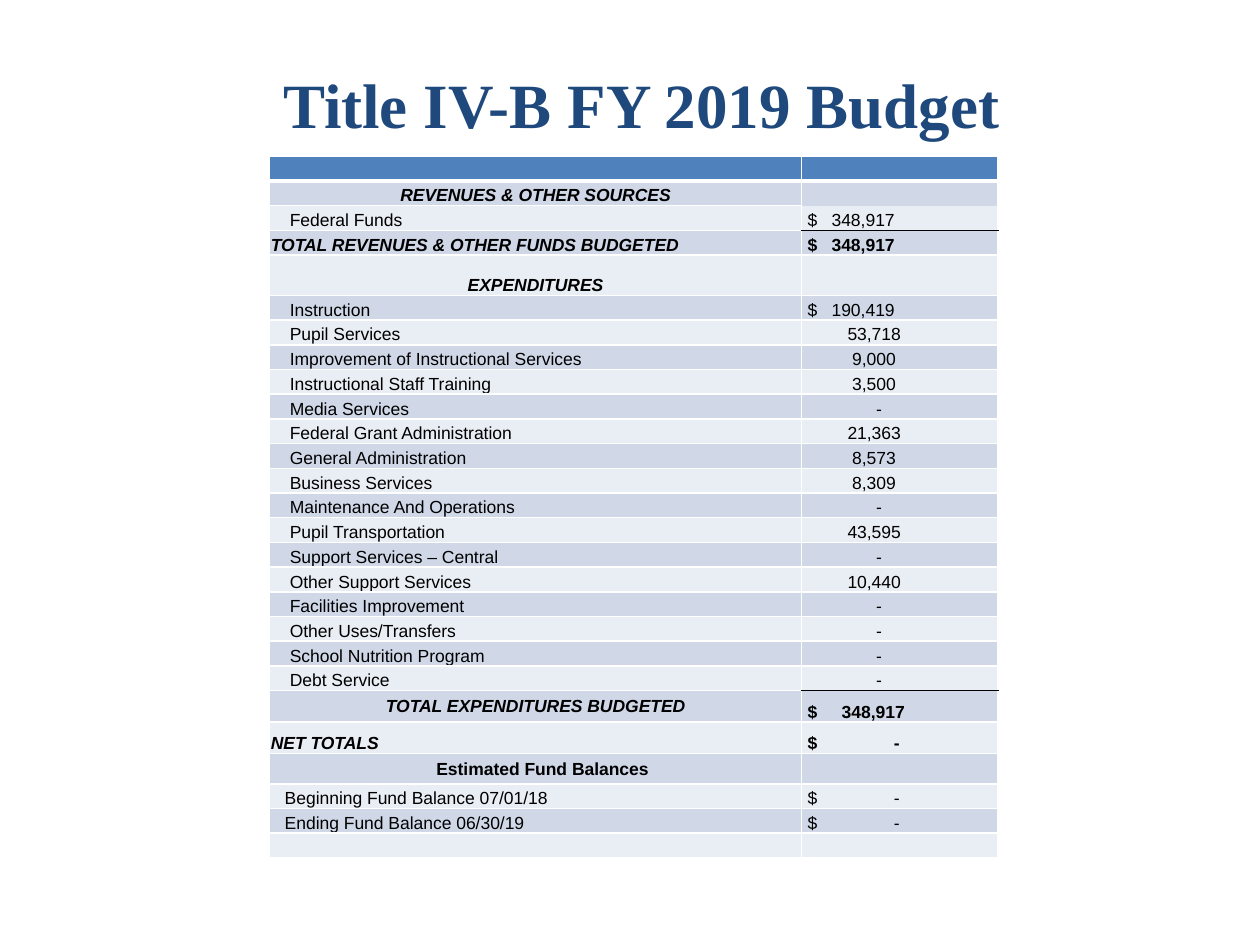
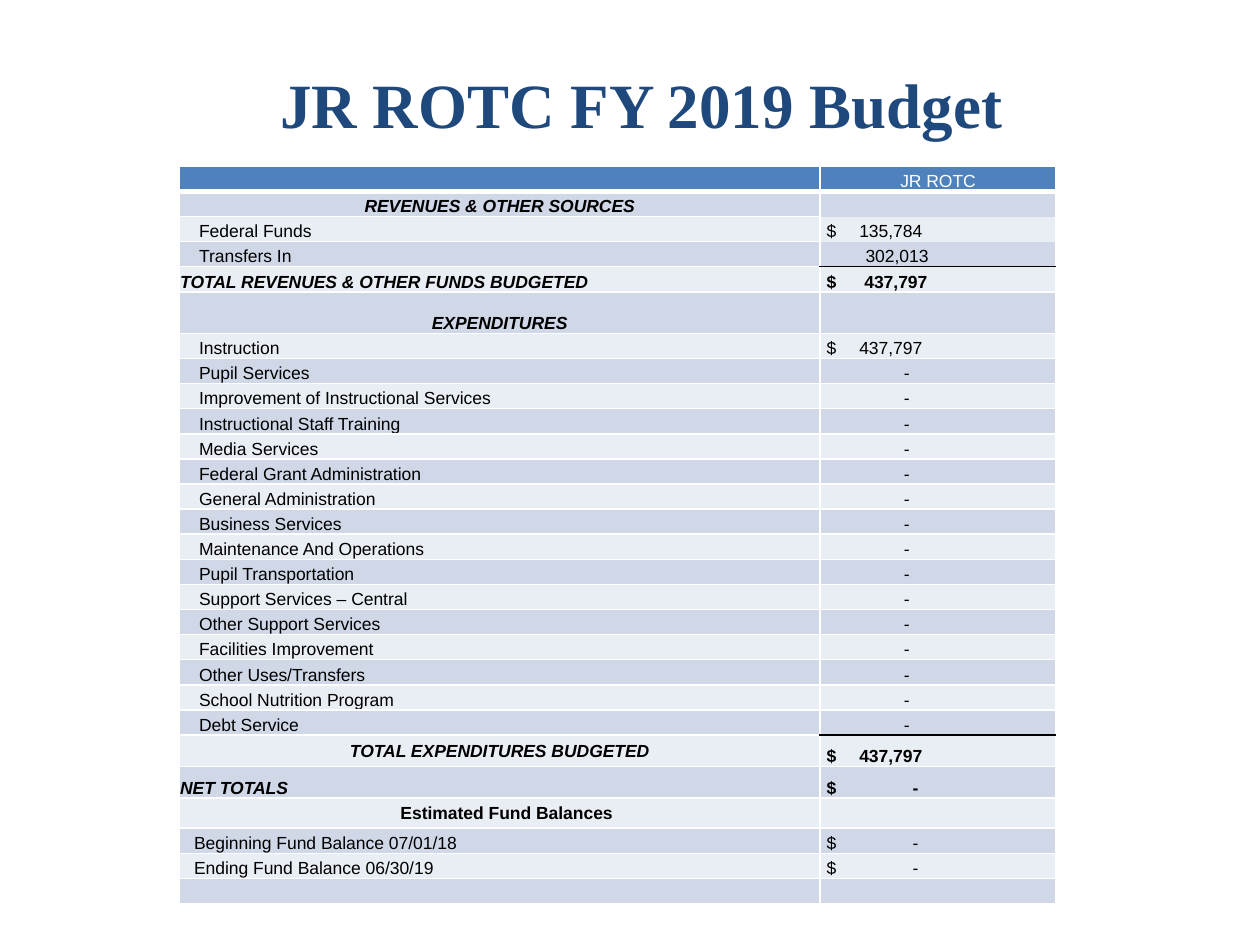
from dataclasses import dataclass

import pptx
import pptx.dml.color
import pptx.enum.text
import pptx.oxml.ns
import pptx.slide
import pptx.table
import pptx.util
from lxml import etree

Inches = pptx.util.Inches
Pt = pptx.util.Pt
ALIGN = pptx.enum.text.PP_ALIGN
ANCHOR = pptx.enum.text.MSO_ANCHOR
qn = pptx.oxml.ns.qn


@dataclass(frozen=True)
class Theme:
    title_color: str = "1F497D"
    header_fill: str = "4F81BD"
    bands: tuple[str, str] = ("D0D8E8", "E9EDF4")
    white: str = "FFFFFF"
    black: str = "000000"
    title_font: str = "Times New Roman"
    body_font: str = "Arial"
    title_size: int = 36
    body_size: int = 10
    rule: int = 1
    header_rule: int = 3
    inset: float = 0.01
    dollar_inset: float = 0.05
    dollar_dash_edge: float = 0.78


THEME = Theme()


@dataclass(frozen=True)
class LabelStyle:
    bold: bool = False
    italic: bool = False
    align: ALIGN = ALIGN.LEFT
    anchor: ANCHOR = ANCHOR.BOTTOM
    indent: float = THEME.inset


ITEM = LabelStyle(indent=0.16)
SECTION = LabelStyle(bold=True, italic=True, align=ALIGN.CENTER)
TOTAL = LabelStyle(bold=True, italic=True)
GRAND_TOTAL = LabelStyle(bold=True, italic=True, align=ALIGN.CENTER, anchor=ANCHOR.MIDDLE)
BALANCE_SECTION = LabelStyle(bold=True, align=ALIGN.CENTER, anchor=ANCHOR.MIDDLE, indent=0.12)
BALANCE = LabelStyle(indent=0.12)


@dataclass(frozen=True)
class Row:
    label: str = ""
    style: LabelStyle = ITEM
    amount: str = ""
    dollar: bool = False
    edge: float = 0  # right edge of the amount, from the column's left side
    height: float | None = None  # None takes an equal share of what is left


@dataclass(frozen=True)
class Budget:
    title: str
    header: str
    left: float
    top: float
    height: float
    columns: tuple[float, float]
    revenues: tuple[tuple[str, str], ...]
    total: str
    expenditures: tuple[str, ...]
    section_height: float
    amount_edge: float
    dash_edge: float
    revenue_total_edge: float
    expenditure_total_edge: float


EXPENDITURE_LABELS = (
    "Instruction",
    "Pupil Services",
    "Improvement of Instructional Services",
    "Instructional Staff Training",
    "Media Services",
    "Federal Grant Administration",
    "General Administration",
    "Business Services",
    "Maintenance And Operations",
    "Pupil Transportation",
    "Support Services – Central",
    "Other Support Services",
    "Facilities Improvement",
    "Other Uses/Transfers",
    "School Nutrition Program",
    "Debt Service",
)

BUDGETS = (
    Budget(
        title="Title IV-B FY 2019 Budget", header="",
        left=2.14, top=1.24, height=5.57, columns=(4.22, 1.51),
        revenues=(("Federal Funds", "348,917"),), total="348,917",
        expenditures=("190,419", "53,718", "9,000", "3,500", "-", "21,363", "8,573", "8,309",
                      "-", "43,595", "-", "10,440", "-", "-", "-", "-"),
        section_height=0.32, amount_edge=0.74, dash_edge=0.59,
        revenue_total_edge=0.74, expenditure_total_edge=0.82,
    ),
    Budget(
        title="JR ROTC FY 2019 Budget", header="JR ROTC",
        left=1.42, top=1.32, height=5.86, columns=(5.09, 1.82),
        revenues=(("Federal Funds", "135,784"), ("Transfers In", "302,013")), total="437,797",
        expenditures=("437,797",) + ("-",) * 15,
        section_height=0.33, amount_edge=0.81, dash_edge=0.66,
        revenue_total_edge=0.85, expenditure_total_edge=0.81,
    ),
)


def item_rows(budget: Budget, items: list[tuple[str, str]]) -> list[Row]:
    """Line items; only the first one carries the dollar sign."""
    rows = []
    for index, (label, amount) in enumerate(items):
        edge = budget.amount_edge
        if amount == "-":
            edge = budget.dash_edge
        elif len(amount) == len("9,000"):
            edge -= 0.04
        rows.append(Row(label, ITEM, amount, index == 0, edge))
    return rows


def budget_rows(budget: Budget) -> list[Row]:
    """All rows below the header."""
    dash = THEME.dollar_dash_edge
    return [
        Row("REVENUES & OTHER SOURCES", SECTION),
        *item_rows(budget, list(budget.revenues)),
        Row("TOTAL REVENUES & OTHER FUNDS BUDGETED", TOTAL, budget.total, True,
            budget.revenue_total_edge),
        Row("EXPENDITURES", SECTION, height=budget.section_height),
        *item_rows(budget, list(zip(EXPENDITURE_LABELS, budget.expenditures))),
        Row("TOTAL EXPENDITURES BUDGETED", GRAND_TOTAL, budget.total, True,
            budget.expenditure_total_edge, 0.25),
        Row("NET TOTALS", TOTAL, "-", True, dash, 0.25),
        Row("Estimated Fund Balances", BALANCE_SECTION, height=0.24),
        Row("Beginning Fund Balance 07/01/18", BALANCE, "-", True, dash),
        Row("Ending Fund Balance 06/30/19", BALANCE, "-", True, dash),
        Row(),
    ]


def rgb(color: str) -> pptx.dml.color.RGBColor:
    return pptx.dml.color.RGBColor.from_string(color)


def write_cell(cell: pptx.table._Cell, text: str, fill: str, style: LabelStyle,
               color: str = THEME.black, right: float = THEME.inset,
               tab: float | None = None) -> None:
    cell.fill.solid()
    cell.fill.fore_color.rgb = rgb(fill)
    cell.margin_left, cell.margin_right = Inches(style.indent), Inches(right)
    cell.margin_top, cell.margin_bottom = Inches(THEME.inset), 0
    cell.vertical_anchor = style.anchor
    paragraph = cell.text_frame.paragraphs[0]
    paragraph.text = text
    paragraph.alignment = style.align
    if tab is not None:
        tabs = etree.SubElement(paragraph._p.get_or_add_pPr(), qn("a:tabLst"))
        etree.SubElement(tabs, qn("a:tab"), pos=str(Inches(tab)), algn="r")
    for run in paragraph.runs:
        run.font.name, run.font.size = THEME.body_font, Pt(THEME.body_size)
        run.font.bold, run.font.italic = style.bold, style.italic
        run.font.color.rgb = rgb(color)
    if not text:  # keeps empty rows from growing
        etree.SubElement(paragraph._p, qn("a:endParaRPr"), sz=str(THEME.body_size * 100))


def write_amount(cell: pptx.table._Cell, row: Row, fill: str, width: float) -> None:
    bold = row.style.bold
    if row.dollar:
        style = LabelStyle(bold=bold, indent=THEME.dollar_inset)
        write_cell(cell, f"$\t{row.amount}", fill, style, tab=row.edge - THEME.dollar_inset)
    else:
        style = LabelStyle(bold=bold, align=ALIGN.RIGHT)
        write_cell(cell, row.amount, fill, style, right=width - row.edge)


def set_borders(cell: pptx.table._Cell, top: tuple[str, int] | None,
                bottom: tuple[str, int] | None) -> None:
    """White sides, with the given top and bottom; None leaves an edge open."""
    side = (THEME.white, THEME.rule)
    properties = cell._tc.get_or_add_tcPr()
    for index, (name, border) in enumerate(zip("LRTB", (side, side, top, bottom))):
        line = etree.Element(qn(f"a:ln{name}"))
        if border is None:
            etree.SubElement(line, qn("a:noFill"))
        else:
            line.set("w", str(Pt(border[1])))
            solid = etree.SubElement(line, qn("a:solidFill"))
            etree.SubElement(solid, qn("a:srgbClr"), val=border[0])
        properties.insert(index, line)


def draw_rules(table: pptx.table.Table, revenue_count: int) -> None:
    white, black = (THEME.white, THEME.rule), (THEME.black, THEME.rule)
    header = (THEME.white, THEME.header_rule)
    row_count = len(table.rows)
    # One border per horizontal edge, so neighbouring cells always agree
    label_edges = [white, header] + [white] * (row_count - 1)
    amount_edges = list(label_edges)
    revenue_total = 2 + revenue_count
    expenditure_total = revenue_total + 2 + len(EXPENDITURE_LABELS)
    for edge in range(2, revenue_total):
        amount_edges[edge] = None
    amount_edges[revenue_total] = amount_edges[expenditure_total] = black
    for column, edges in enumerate((label_edges, amount_edges)):
        for index in range(row_count):
            set_borders(table.cell(index, column), edges[index], edges[index + 1])


def add_title(slide: pptx.slide.Slide, text: str) -> None:
    shape = slide.shapes.add_textbox(Inches(0.59), Inches(0.42), Inches(9), Inches(0.82))
    frame = shape.text_frame
    frame.word_wrap = True
    frame.margin_top = Inches(0.1)
    frame.text = text
    paragraph = frame.paragraphs[0]
    paragraph.alignment = ALIGN.CENTER
    font = paragraph.runs[0].font
    font.name, font.size, font.bold = THEME.title_font, Pt(THEME.title_size), True
    font.color.rgb = rgb(THEME.title_color)


def add_budget_table(slide: pptx.slide.Slide, budget: Budget) -> None:
    rows = budget_rows(budget)
    table = slide.shapes.add_table(
        len(rows) + 1, 2, Inches(budget.left), Inches(budget.top),
        Inches(sum(budget.columns)), Inches(budget.height)).table
    table.first_row = table.horz_banding = False
    for column, width in zip(table.columns, budget.columns):
        column.width = Inches(width)

    # Row heights
    heights = [None] + [row.height for row in rows]
    fixed = [height for height in heights if height]
    share = (budget.height - sum(fixed)) / (len(heights) - len(fixed))
    for table_row, height in zip(table.rows, heights):
        table_row.height = Inches(height or share)

    # Header and banded body
    for column, text in enumerate(("", budget.header)):
        write_cell(table.cell(0, column), text, THEME.header_fill,
                   LabelStyle(align=ALIGN.CENTER), THEME.white)
    for index, row in enumerate(rows, start=1):
        fill = THEME.bands[(index - 1) % 2]
        write_cell(table.cell(index, 0), row.label, fill, row.style)
        write_amount(table.cell(index, 1), row, fill, budget.columns[1])
    draw_rules(table, len(budget.revenues))


def main() -> None:
    presentation = pptx.Presentation()
    presentation.slide_width, presentation.slide_height = Inches(10), Inches(7.5)
    for budget in BUDGETS:
        slide = presentation.slides.add_slide(presentation.slide_layouts[6])
        add_title(slide, budget.title)
        add_budget_table(slide, budget)
    presentation.save("out.pptx")


if __name__ == "__main__":
    main()
